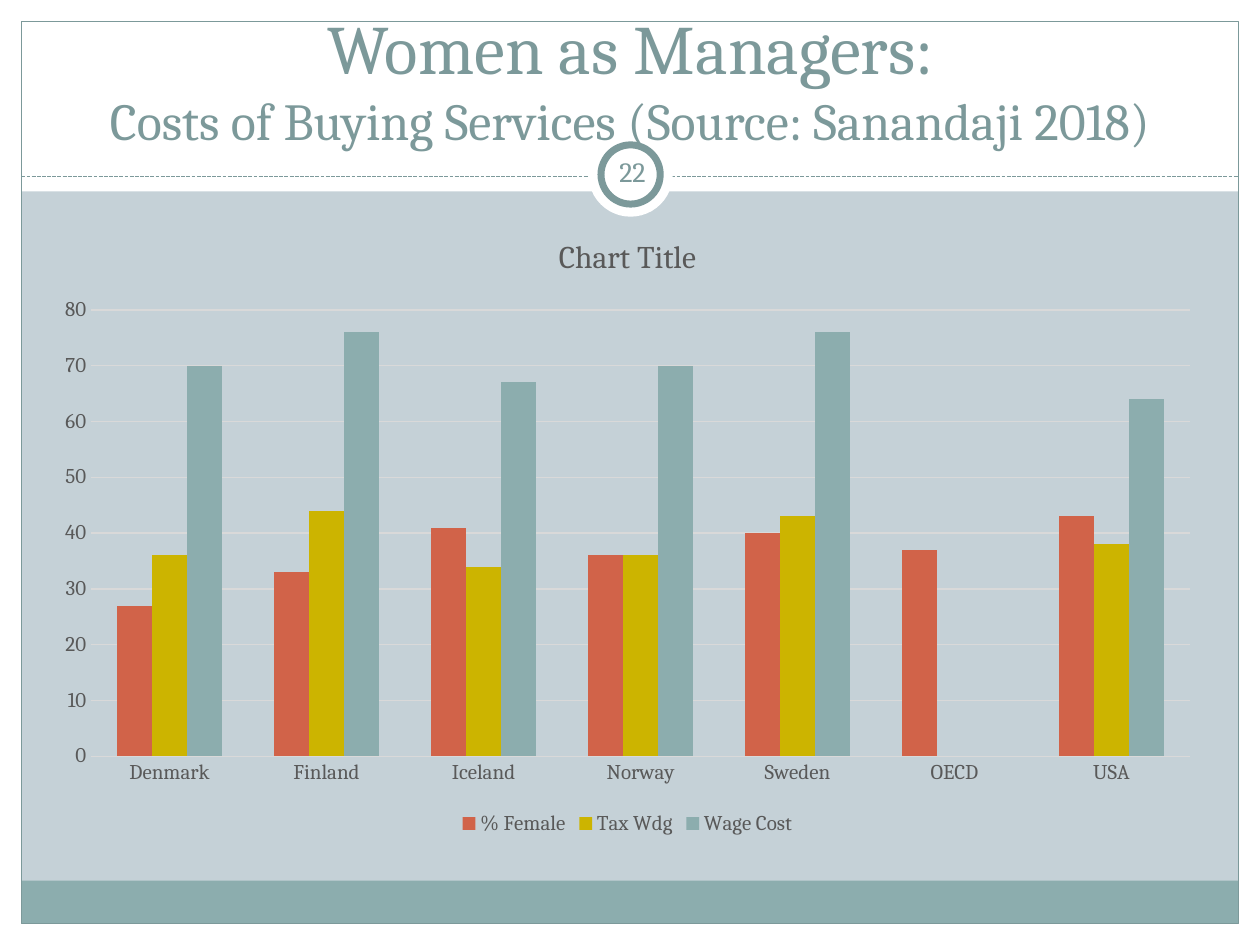
from lxml.etree import SubElement
from pptx import Presentation
from pptx.chart.data import CategoryChartData
from pptx.dml.color import RGBColor
from pptx.enum.chart import XL_CHART_TYPE, XL_LEGEND_POSITION, XL_TICK_MARK
from pptx.enum.dml import MSO_LINE
from pptx.enum.shapes import MSO_CONNECTOR, MSO_SHAPE
from pptx.enum.text import MSO_ANCHOR, MSO_AUTO_SIZE, PP_ALIGN
from pptx.oxml.ns import qn
from pptx.util import Inches, Pt

FONT = "Cambria"
WHITE = RGBColor(0xFF, 0xFF, 0xFF)
BACK = RGBColor(0xC5, 0xD1, 0xD7)
SLATE = RGBColor(0x7C, 0x99, 0x9A)
TEAL = RGBColor(0x8C, 0xAD, 0xAE)
RED = RGBColor(0xD1, 0x63, 0x49)
GOLD = RGBColor(0xCC, 0xB4, 0x00)
GREY = RGBColor(0x59, 0x59, 0x59)
PALE = RGBColor(0xD9, 0xD9, 0xD9)

LANDS = ["Denmark", "Finland", "Iceland", "Norway", "Sweden", "OECD", "USA"]
SERIES = [
    ("% Female", [27, 33, 41, 36, 40, 37, 43], RED),
    ("Tax Wdg", [36, 44, 34, 36, 43, None, 38], GOLD),
    ("Wage Cost", [70, 76, 67, 70, 76, None, 64], TEAL),
]


def scale(box):
    """Turn a box in inches into lengths."""
    return [Inches(size) for size in box]


def style(font, size, color):
    """Set the face, size and colour of a font."""
    font.name = FONT
    font.size = Pt(size)
    font.color.rgb = color


def add_form(slide, kind, box, fill=None, line=None, width=0.75):
    """Add a plain shape with an optional fill and outline."""
    form = slide.shapes.add_shape(kind, *scale(box))
    form.shadow.inherit = False
    if fill is None:
        form.fill.background()
    else:
        form.fill.solid()
        form.fill.fore_color.rgb = fill
    if line is None:
        form.line.fill.background()
    else:
        form.line.color.rgb = line
        form.line.width = Pt(width)


def add_frame(slide, box):
    """Draw the white margins, footer band, border and dashed rule."""
    left, top, width, height = box
    edge, head, band = 0.17, 1.52, 0.34
    right, base = left + width - edge, top + height - edge
    inner = width - 2 * edge
    rect = MSO_SHAPE.RECTANGLE
    for side in [
        (left, base, width, edge),
        (left, top, width, head),
        (left, top, edge, height),
        (right, top, edge, height),
    ]:
        add_form(slide, rect, side, WHITE)
    add_form(slide, rect, (left + edge, base - band, inner, band), TEAL)
    add_form(slide, rect, (left + edge, top + edge, inner, height - 2 * edge), line=SLATE)
    ends = scale((left + edge, top + 1.4, right, top + 1.4))
    rule = slide.shapes.add_connector(MSO_CONNECTOR.STRAIGHT, *ends)
    rule.line.color.rgb = SLATE
    rule.line.width = Pt(0.75)
    rule.line.dash_style = MSO_LINE.SQUARE_DOT
    SubElement(rule._element.spPr, qn("a:effectLst"))


def add_badge(slide, box, number):
    """Draw the ringed page number."""
    left, top, size, _ = box
    gap = 0.1
    ring = size - 2 * gap
    add_form(slide, MSO_SHAPE.OVAL, box, WHITE)
    add_form(slide, MSO_SHAPE.OVAL, (left + gap, top + gap, ring, ring), WHITE, SLATE, 4)
    label = slide.shapes.add_textbox(*scale((left + gap, top + 0.07, 0.5, 0.48)))
    frame = label.text_frame
    frame.word_wrap = True
    frame.vertical_anchor = MSO_ANCHOR.MIDDLE
    frame.margin_left = frame.margin_right = Inches(0.05)
    frame.margin_top = frame.margin_bottom = Inches(0.05)
    frame.text = number
    para = frame.paragraphs[0]
    para.alignment = PP_ALIGN.CENTER
    style(para.runs[0].font, 16, SLATE)


def set_title(slide, box, text):
    """Place the two-line title in front of the frame."""
    title = slide.shapes.title
    slide.shapes._spTree.append(title._element)
    title.left, title.top, title.width, title.height = scale(box)
    frame = title.text_frame
    frame.auto_size = MSO_AUTO_SIZE.NONE
    frame.word_wrap = True
    frame.vertical_anchor = MSO_ANCHOR.BOTTOM
    frame.text = text
    para = frame.paragraphs[0]
    para.alignment = PP_ALIGN.CENTER
    for run, size in zip(para.runs, (39.6, 29.7)):
        style(run.font, size, SLATE)


def add_bars(slide, box):
    """Add the clustered column chart."""
    data = CategoryChartData()
    data.categories = LANDS
    for name, vals, _ in SERIES:
        data.add_series(name, vals)
    kind = XL_CHART_TYPE.COLUMN_CLUSTERED
    chart = slide.shapes.add_chart(kind, *scale(box), data).chart
    style(chart.font, 12, GREY)
    chart.has_title = True
    head = chart.chart_title.text_frame
    head.text = "Chart Title"
    run = head.paragraphs[0].runs[0]
    style(run.font, 18, GREY)
    run.font.bold = False
    chart.has_legend = True
    chart.legend.position = XL_LEGEND_POSITION.BOTTOM
    chart.legend.include_in_layout = False
    style(chart.legend.font, 12, GREY)
    for axis in (chart.category_axis, chart.value_axis):
        axis.major_tick_mark = XL_TICK_MARK.NONE
        axis.minor_tick_mark = XL_TICK_MARK.NONE
        axis.format.line.fill.background()
        style(axis.tick_labels.font, 12, GREY)
    scale_axis = chart.value_axis
    scale_axis.minimum_scale, scale_axis.maximum_scale = 0, 80
    scale_axis.major_unit = 10
    grid = scale_axis.major_gridlines.format.line
    grid.color.rgb = PALE
    grid.width = Pt(0.75)
    plot = chart.plots[0]
    plot.vary_by_categories = False
    plot.gap_width = 150
    plot.overlap = 0
    for bars, (_, _, color) in zip(plot.series, SERIES):
        bars.format.fill.solid()
        bars.format.fill.fore_color.rgb = color


def main():
    """Build the slide and save it."""
    deck = Presentation()
    deck.slide_width, deck.slide_height = Inches(10), Inches(7.5)
    slide = deck.slides.add_slide(deck.slide_layouts[5])
    slide.background.fill.solid()
    slide.background.fill.fore_color.rgb = BACK
    add_frame(slide, (0, 0, 10, 7.5))
    add_badge(slide, (4.67, 1.05, 0.67, 0.67), "22")
    set_title(
        slide,
        (0.17, 0.17, 9.67, 1.08),
        "Women as Managers:\vCosts of Buying Services (Source: Sanandaji 2018)",
    )
    add_bars(slide, (0.33, 1.67, 9.3, 5))
    deck.save("out.pptx")


if __name__ == "__main__":
    main()
